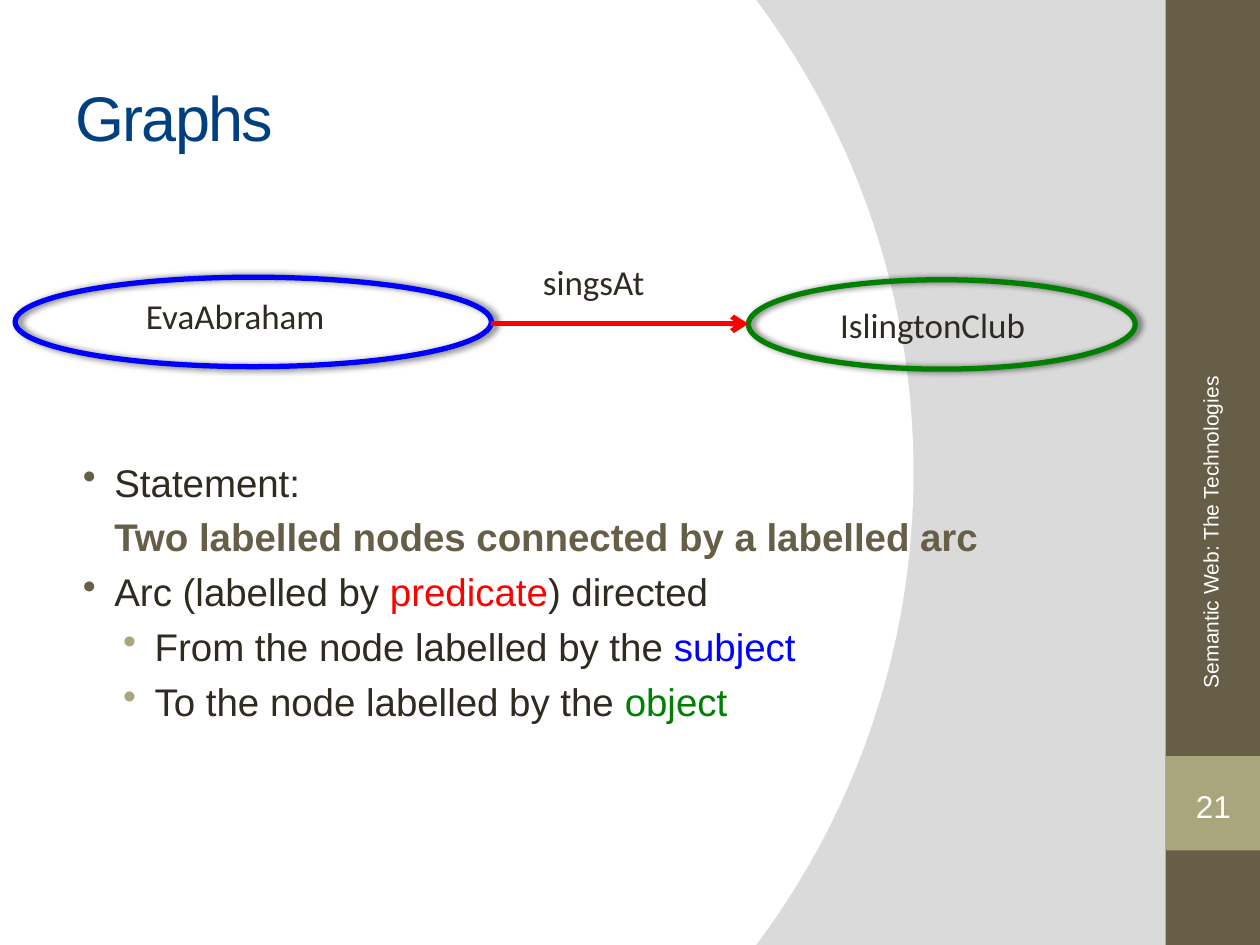
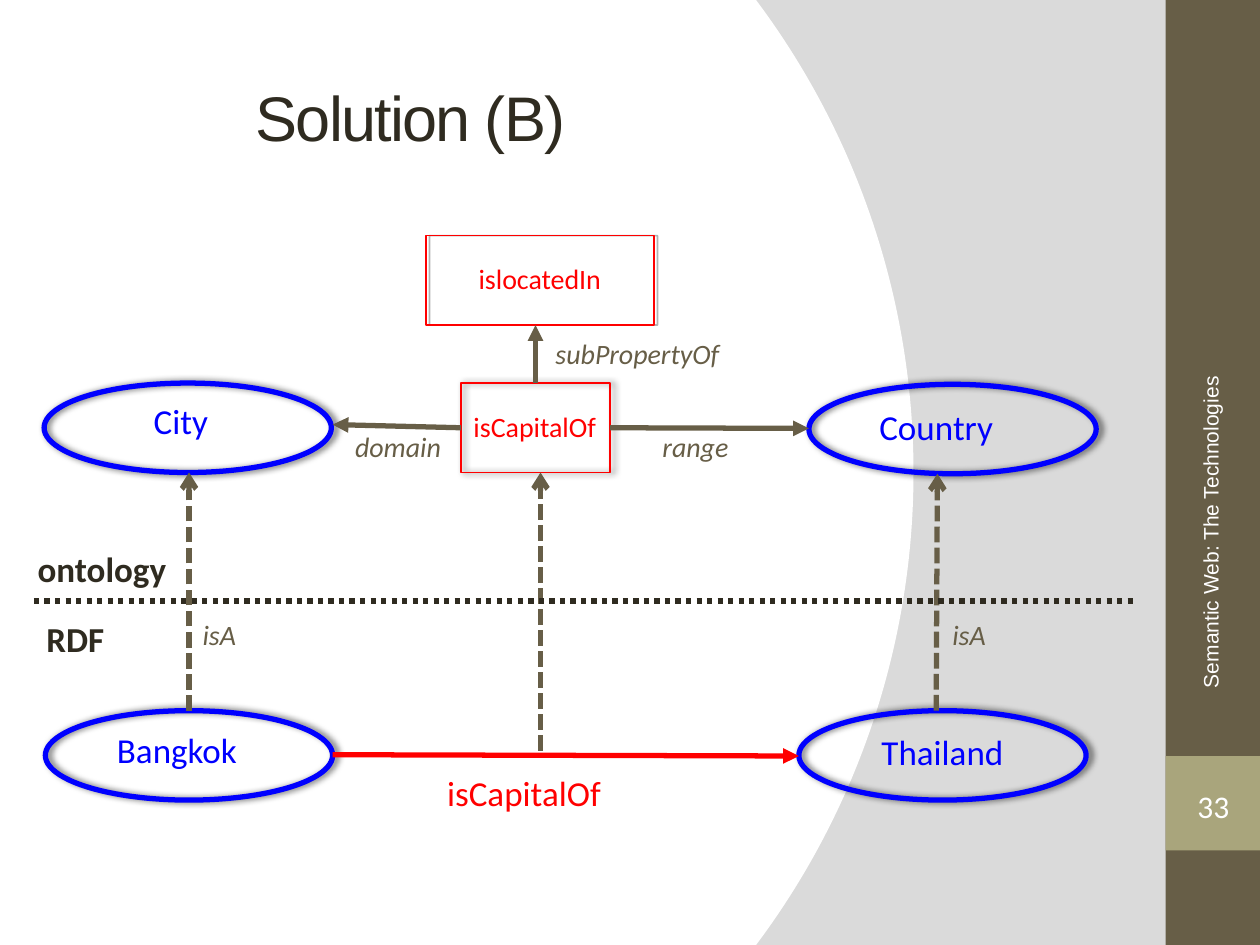
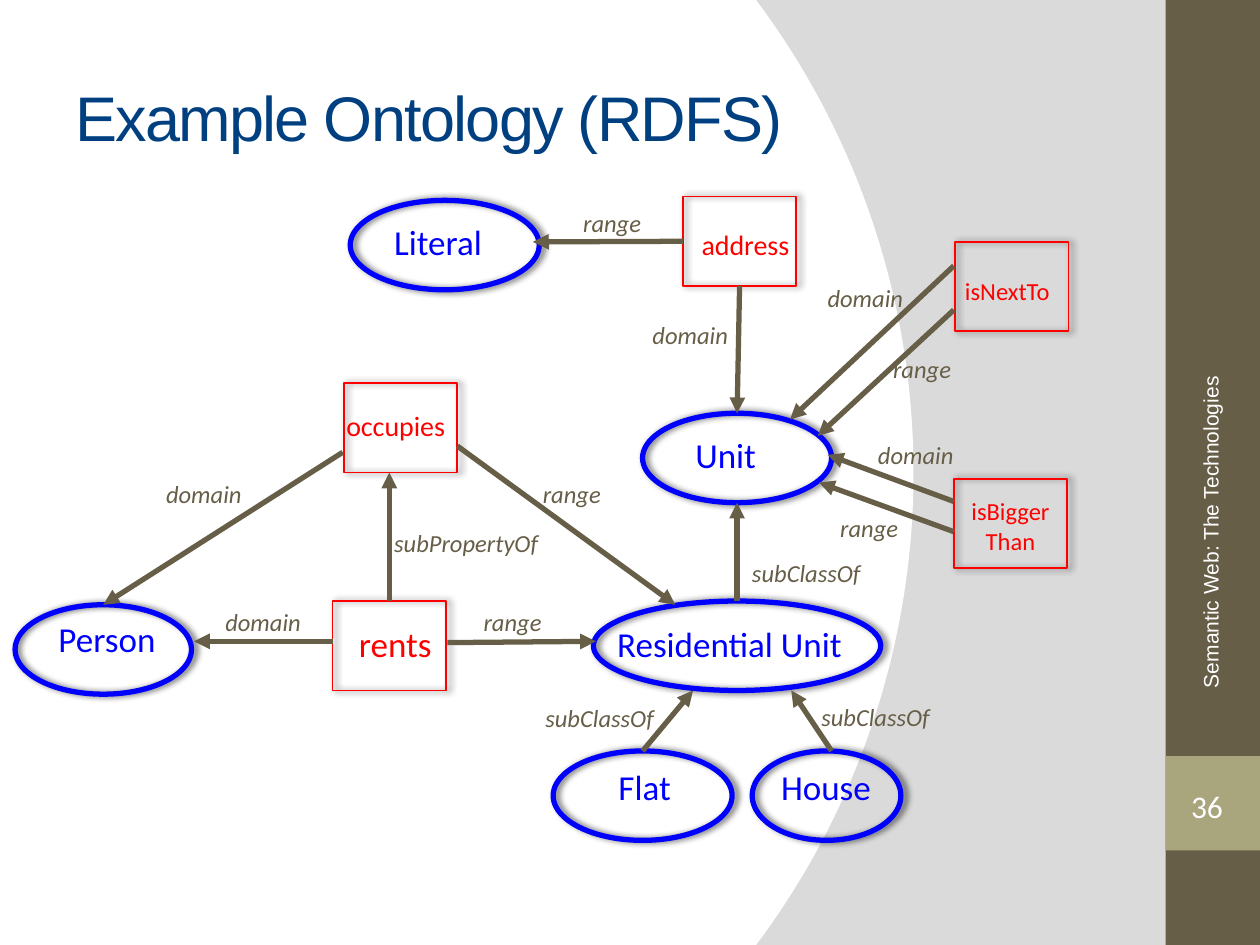
"""Build three slides on semantic web graphs."""
from dataclasses import dataclass

from pptx import Presentation
from pptx import util as u
from pptx.dml.color import RGBColor
from pptx.enum import dml, shapes, text
from pptx.oxml import parse_xml
from pptx.oxml.ns import nsdecls, qn

PX = 9144
OVAL = shapes.MSO_SHAPE.OVAL
RECT = shapes.MSO_SHAPE.RECTANGLE
MID = text.PP_ALIGN.CENTER
DASH = dml.MSO_LINE.SQUARE_DOT
DOTS = dml.MSO_LINE.ROUND_DOT


@dataclass(frozen=True)
class Theme:
    """Colours, fonts and type sizes of the deck."""
    ink: str = "2F2B20"
    navy: str = "004080"
    brown: str = "675E47"
    sand: str = "A9A57C"
    white: str = "FFFFFF"
    grey: str = "DADADA"
    blue: str = "0000FF"
    red: str = "FF0000"
    green: str = "008000"
    black: str = "000000"
    shade: str = "808080"
    sans: str = "Arial"
    human: str = "Calibri"
    title: int = 36
    body: int = 22
    node: int = 20
    page: int = 18
    prop: int = 16
    small: int = 14
    foot: int = 12


T = Theme()


@dataclass(frozen=True)
class Node:
    """An outlined shape of a graph."""
    x: int
    y: int
    w: int = 228
    h: int = 71
    hue: str = T.blue
    form: int = OVAL
    thick: int = 3
    blur: int = 4
    shade: str = T.black


@dataclass(frozen=True)
class Arc:
    """A straight line that points at its second end."""
    x1: int
    y1: int
    x2: int
    y2: int
    hue: str = T.brown
    head: str = "triangle"
    dash: int | None = None


@dataclass(frozen=True)
class Label:
    """A piece of text in a box of its own."""
    words: str
    x: int
    y: int
    w: int
    size: int = T.node
    hue: str = T.blue
    align: int | None = None
    bold: bool = False
    slant: bool = False


@dataclass(frozen=True)
class Point:
    """A body paragraph made of (words, colour) runs."""
    runs: tuple
    level: int = 0
    mark: str | None = T.brown
    bold: bool = False


def rgb(hue: str) -> RGBColor:
    """Turn a hex string into a colour."""
    return RGBColor.from_string(hue)


def box(x: int, y: int, w: int, h: int) -> list:
    """Turn px into EMU."""
    return [v * PX for v in (x, y, w, h)]


def prop(words: str, x: int, y: int, w: int, size: int = T.prop,
         align: int | None = None) -> Label:
    """Make the red name of a property."""
    return Label(words, x, y, w, size, T.red, align)


def role(words: str, x: int, y: int, w: int = 94, size: int = T.small) -> Label:
    """Make the slanted name of an arc."""
    return Label(words, x, y, w, size, T.brown, slant=True)


def square(x: int, y: int, w: int = 90, blur: int = 4, shade: str = T.black) -> Node:
    """Make the red frame of a property."""
    return Node(x, y, w, 71, T.red, RECT, 1, blur, shade)


def style(font, size: int, hue: str, face: str, bold: bool = False) -> None:
    """Set the look of a font."""
    font.size, font.name, font.bold = u.Pt(size), face, bold
    font.color.rgb = rgb(hue)


def write(slide, words: str, place: tuple, size: int, hue: str, face: str):
    """Add a wrapped text box and style its runs."""
    item = slide.shapes.add_textbox(*box(*place))
    frame = item.text_frame
    frame.word_wrap = True
    frame.text = words
    for para in frame.paragraphs:
        for run in para.runs:
            style(run.font, size, hue, face)
    return item


def draw_node(slide, node: Node):
    """Draw an outlined shape with a soft shadow."""
    item = slide.shapes.add_shape(node.form, *box(node.x, node.y, node.w, node.h))
    item.fill.background()
    item.line.color.rgb = rgb(node.hue)
    item.line.width = u.Pt(node.thick)
    item.shadow.inherit = False
    item.element.spPr.find(qn("a:effectLst")).append(parse_xml(
        f'<a:outerShdw {nsdecls("a")} blurRad="{u.Pt(node.blur)}" dist="{u.Pt(2)}" '
        f'dir="0" rotWithShape="0"><a:srgbClr val="{node.shade}">'
        '<a:alpha val="60000"/></a:srgbClr></a:outerShdw>'))
    return item


def find_side(x: int, y: int, frames: list):
    """Find the frame and side whose middle lies at a point."""
    for node, item in frames:
        cx, cy = node.x + node.w / 2, node.y + node.h / 2
        sides = ((cx, node.y), (node.x, cy),
                 (cx, node.y + node.h), (node.x + node.w, cy))
        for side, (sx, sy) in enumerate(sides):
            if max(abs(sx - x), abs(sy - y)) <= 2:
                return item, side
    return None


def draw_arc(slide, arc: Arc, frames: list) -> None:
    """Draw a line and join it to the frames it meets."""
    item = slide.shapes.add_connector(
        shapes.MSO_CONNECTOR.STRAIGHT, *box(arc.x1, arc.y1, arc.x2, arc.y2))
    item.line.color.rgb = rgb(arc.hue)
    item.line.width = u.Pt(3)
    if arc.dash is not None:
        item.line.dash_style = arc.dash
    item.line._ln.append(parse_xml(f'<a:tailEnd {nsdecls("a")} type="{arc.head}"/>'))
    item.element.spPr.append(parse_xml(f'<a:effectLst {nsdecls("a")}/>'))
    first = find_side(arc.x1, arc.y1, frames)
    last = find_side(arc.x2, arc.y2, frames)
    if first:
        item.begin_connect(*first)
    if last:
        item.end_connect(*last)


def draw_label(slide, label: Label) -> None:
    """Draw a label whose box grows with its text."""
    high = {T.node: 44, T.prop: 37, T.small: 34}[label.size]
    high += 23 * label.words.count("\n")
    item = write(slide, label.words, (label.x, label.y, label.w, high),
                 label.size, label.hue, T.human)
    item.text_frame.auto_size = text.MSO_AUTO_SIZE.SHAPE_TO_FIT_TEXT
    for para in item.text_frame.paragraphs:
        para.alignment = label.align
        for run in para.runs:
            run.font.bold, run.font.italic = label.bold, label.slant


def draw_graph(slide, nodes: list, arcs: list, labels: list) -> None:
    """Draw nodes, then arcs, then labels."""
    drawn = [(node, draw_node(slide, node)) for node in nodes]
    frames = [pair for pair in drawn if pair[0].form == RECT]
    for arc in arcs:
        draw_arc(slide, arc, frames)
    for label in labels:
        draw_label(slide, label)


def draw_points(slide, place: tuple, points: list) -> None:
    """Draw the body text with its bullets."""
    frame = slide.shapes.add_textbox(*box(*place)).text_frame
    frame.word_wrap = True
    for i, point in enumerate(points):
        para = frame.add_paragraph() if i else frame.paragraphs[0]
        para.level = point.level
        if i:
            para.space_before = u.Pt(5)
        props = para._p.get_or_add_pPr()
        props.set("marL", str((38, 70)[point.level] * PX))
        props.set("indent", str((-25 if point.mark else 0) * PX))
        if point.mark:
            props.append(parse_xml(f'<a:buClr {nsdecls("a")}>'
                                   f'<a:srgbClr val="{point.mark}"/></a:buClr>'))
            props.append(parse_xml(f'<a:buChar {nsdecls("a")} char="•"/>'))
        for words, hue in point.runs:
            run = para.add_run()
            run.text = words
            style(run.font, T.body, hue, T.sans, point.bold)


def set_back(layout) -> None:
    """Give the layout a white disc on grey."""
    layout.background.fill.solid()
    back = layout.element.find(".//" + qn("p:bgPr"))
    stops = "".join(f'<a:gs pos="100000"><a:srgbClr val="{hue}"/></a:gs>'
                    for hue in (T.white, T.grey))
    back.replace(back[0], parse_xml(
        f'<a:gradFill {nsdecls("a")} rotWithShape="1"><a:gsLst>{stops}</a:gsLst>'
        '<a:path path="circle"><a:fillToRect l="20000" t="50000" r="100000" '
        'b="50000"/></a:path></a:gradFill>'))


def add_slide(deck, title: str, page: str, place: tuple = (50, 30, 833, 125),
              hue: str = T.navy, face: str = T.human, left: int = 933):
    """Add a slide with bands, title, page number and footer."""
    slide = deck.slides.add_slide(deck.slide_layouts[6])
    for top, high, fill in ((0, 750, T.brown), (600, 75, T.sand)):
        band = slide.shapes.add_shape(RECT, *box(925, top, 75, high))
        band.fill.solid()
        band.fill.fore_color.rgb = rgb(fill)
        band.line.fill.background()
        band.shadow.inherit = False
    head = write(slide, title, place, T.title, hue, T.sans)
    head.text_frame.vertical_anchor = text.MSO_ANCHOR.MIDDLE
    head.text_frame.paragraphs[0].runs[0].font._element.set("spc", "-100")

    tag = slide.shapes.add_shape(shapes.MSO_SHAPE.DOUBLE_BRACKET,
                                 *box(left, 618, 60, 43))
    tag.adjustments[0] = 0.18
    tag.fill.background()
    tag.line.fill.background()
    tag.shadow.inherit = False
    frame = tag.text_frame
    frame.margin_left = frame.margin_right = 0
    frame.margin_top = frame.margin_bottom = 0
    frame.vertical_anchor = text.MSO_ANCHOR.MIDDLE
    frame.text = page
    frame.paragraphs[0].alignment = MID
    style(frame.paragraphs[0].runs[0].font, T.page, T.white, face)

    foot = write(slide, "Semantic Web: The Technologies", (685, 253, 551, 55),
                 T.foot, T.white, T.sans)
    foot.rotation = 270
    foot.text_frame.vertical_anchor = text.MSO_ANCHOR.MIDDLE
    return slide


def graphs(deck) -> None:
    """Build the slide on statements as graphs."""
    slide = add_slide(deck, "Graphs", "21", face=T.sans)
    draw_points(slide, (43, 359, 833, 260), [
        Point((("Statement:", T.ink),)),
        Point((("Two labelled nodes connected by a labelled arc", T.brown),),
              mark=None, bold=True),
        Point((("Arc (labelled by ", T.ink), ("predicate", T.red),
               (") directed", T.ink))),
        Point((("From the node labelled by the ", T.ink), ("subject", T.blue)),
              1, T.sand),
        Point((("To the node labelled by the ", T.ink), ("object", T.green)),
              1, T.sand),
    ])
    draw_graph(
        slide,
        [Node(12, 220, 378), Node(594, 222, 307, hue=T.green)],
        [Arc(390, 257, 594, 257, T.red, "arrow")],
        [Label("singsAt", 421, 202, 158, hue=T.ink),
         Label("EvaAbraham", 106, 229, 299, hue=T.ink),
         Label("IslingtonClub", 657, 236, 213, hue=T.ink)])


def solution(deck) -> None:
    """Build the slide on the capital city example."""
    slide = add_slide(deck, "Solution (B)", "33", (193, 30, 635, 125), T.ink)
    draw_graph(
        slide,
        [Node(35, 304), Node(36, 564), Node(634, 564), Node(642, 305),
         square(366, 304, 118), square(338, 187, 181, 0, T.shade)],
        [Arc(150, 564, 150, 375, head="arrow", dash=DASH),
         Arc(429, 596, 429, 375, head="arrow", dash=DASH),
         Arc(743, 564, 744, 376, head="arrow", dash=DASH),
         Arc(27, 477, 902, 477, T.ink, "none", DOTS),
         Arc(264, 599, 634, 600, T.red),
         Arc(366, 340, 264, 337),
         Arc(484, 338, 642, 340),
         Arc(425, 305, 425, 258)],
        [Label("City", 61, 312, 165, align=MID),
         Label("Country", 617, 317, 252, align=MID),
         Label("Bangkok", 83, 573, 165),
         Label("Thailand", 642, 575, 212, align=MID),
         Label("ontology", 20, 430, 134, hue=T.ink, bold=True),
         Label("RDF", 27, 485, 79, hue=T.ink, bold=True),
         prop("isCapitalOf", 345, 607, 171, T.node),
         prop("isCapitalOf", 366, 320, 126),
         prop("islocatedIn", 370, 203, 134),
         role("domain", 272, 336, size=T.prop),
         role("range", 516, 336, size=T.prop),
         role("isA", 151, 485, size=T.prop),
         role("isA", 746, 485, 71, T.prop),
         role("subPropertyOf", 431, 262, 165, T.prop)])


def ontology(deck) -> None:
    """Build the slide on the housing ontology."""
    slide = add_slide(deck, "Example Ontology (RDFS)", "36", left=928)
    draw_graph(
        slide,
        [Node(278, 159, 150), Node(510, 328, 150), Node(12, 480, 140),
         Node(471, 477), Node(439, 596, 142), Node(597, 596, 118),
         square(542, 156), square(758, 192), square(757, 380),
         square(273, 304), square(264, 477)],
        [Arc(543, 191, 423, 192), Arc(587, 227, 585, 328),
         Arc(757, 211, 627, 333), Arc(757, 246, 649, 346),
         Arc(757, 398, 657, 361), Arc(757, 422, 650, 383),
         Arc(272, 359, 82, 480), Arc(363, 354, 536, 480),
         Arc(309, 477, 309, 375), Arc(264, 509, 154, 509),
         Arc(355, 510, 473, 509), Arc(585, 477, 585, 399),
         Arc(510, 596, 550, 548), Arc(660, 596, 628, 548)],
        [Label("Literal", 303, 170, 126),
         Label("Unit", 542, 339, 165),
         Label("Person", 0, 485, 170, align=MID),
         Label("Residential Unit", 480, 489, 227),
         Label("Flat", 481, 603, 109),
         Label("House", 610, 603, 121),
         prop("rents", 275, 489, 79, T.node),
         prop("occupies", 265, 319, 110),
         prop("address", 547, 176, 110),
         prop("isNextTo", 756, 214, 98, T.small),
         prop("isBigger\nThan", 753, 389, 98, T.small, MID),
         role("range", 453, 160), role("domain", 508, 249),
         role("domain", 647, 220), role("range", 699, 276),
         role("domain", 687, 344), role("range", 657, 402),
         role("domain", 122, 375), role("range", 421, 375),
         role("domain", 169, 477), role("range", 374, 477),
         role("subPropertyOf", 303, 414, 165),
         role("subClassOf", 587, 438, 126),
         role("subClassOf", 423, 553, 126),
         role("subClassOf", 642, 552, 126)])


def main() -> None:
    """Build and save the deck."""
    deck = Presentation()
    deck.slide_width, deck.slide_height = 1000 * PX, 750 * PX
    set_back(deck.slide_layouts[6])
    for build in (graphs, solution, ontology):
        build(deck)
    deck.save("out.pptx")


if __name__ == "__main__":
    main()
